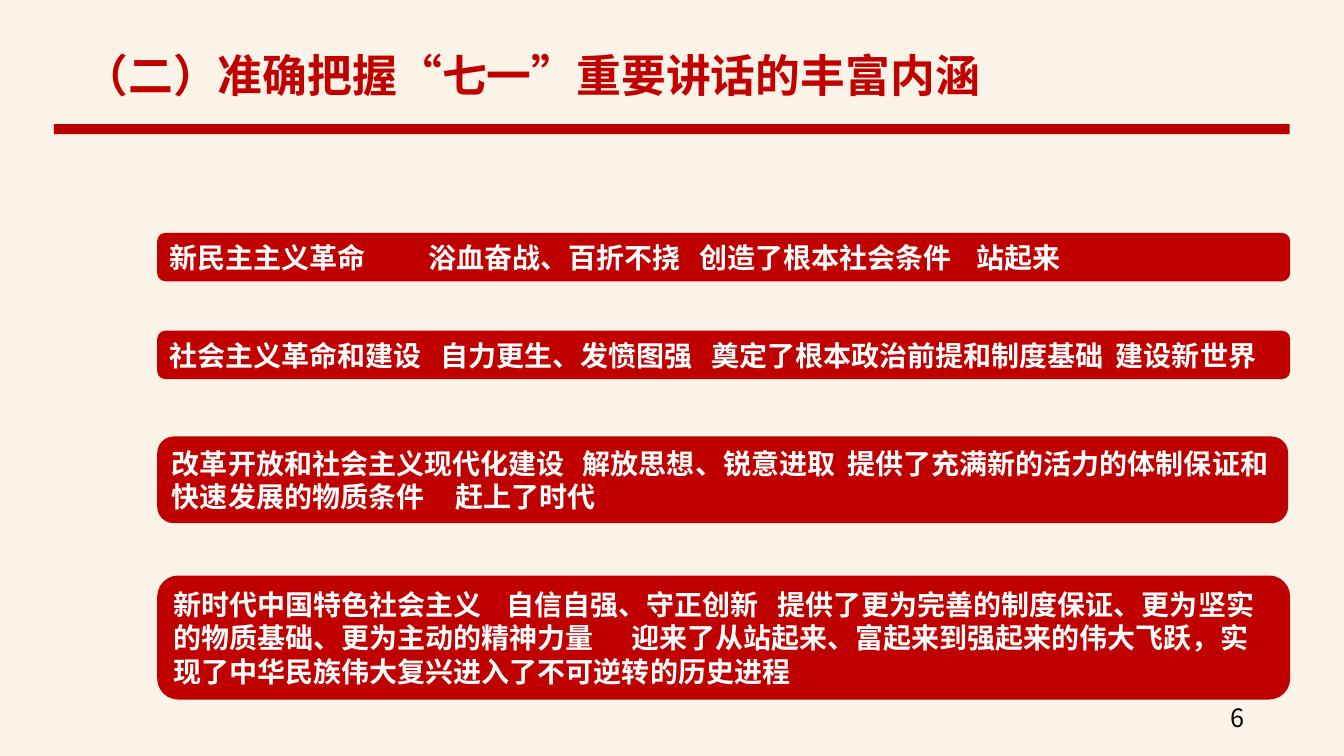
from dataclasses import dataclass

from lxml import etree
from pptx import Presentation
from pptx.dml.color import RGBColor
from pptx.enum import lang, shapes, text
from pptx.oxml import ns
from pptx.util import Pt


@dataclass(frozen=True)
class Theme:
    font: str = "Noto Sans CJK SC"
    paper: str = "FBF2E8"
    heading: str = "C10100"
    rule: str = "BA0000"
    bar: str = "C00000"
    on_bar: str = "FFFFFF"
    ink: str = "000000"
    heading_size: int = 32
    bar_size: int = 20
    number_size: int = 18


class SlideBuilder:
    def __init__(self, slide, theme):
        self.slide, self.theme = slide, theme
        self.fill(slide.background.fill, theme.paper)

    def fill(self, target, color):
        target.solid()
        target.fore_color.rgb = RGBColor.from_string(color)

    def block(self, preset, left, top, width, height, color):
        block = self.slide.shapes.add_shape(
            preset, Pt(left), Pt(top), Pt(width), Pt(height))
        block.shadow.inherit = False
        self.fill(block.fill, color)
        block.line.fill.background()
        return block

    def set_words(self, frame, words, size, color, bold, anchor, stops=()):
        frame.word_wrap = True
        frame.vertical_anchor = anchor
        paragraph = frame.paragraphs[0]
        paragraph.alignment = text.PP_ALIGN.LEFT
        if stops:
            tabs = etree.SubElement(paragraph._p.get_or_add_pPr(), ns.qn("a:tabLst"))
            for stop in stops:
                etree.SubElement(tabs, ns.qn("a:tab"), pos=str(Pt(stop)), algn="l")
        run = paragraph.add_run()
        run.text = words
        font = run.font
        font.size, font.bold, font.name = Pt(size), bold, self.theme.font
        font.language_id = lang.MSO_LANGUAGE_ID.SIMPLIFIED_CHINESE
        self.fill(font.fill, color)
        east_asian = etree.Element(ns.qn("a:ea"), typeface=self.theme.font)
        run._r.rPr.find(ns.qn("a:latin")).addnext(east_asian)

    def label(self, left, top, width, height, words, size, color, bold, anchor):
        box = self.slide.shapes.add_textbox(
            Pt(left), Pt(top), Pt(width), Pt(height))
        self.set_words(box.text_frame, words, size, color, bold, anchor)

    def bar(self, top, width, height, phrases, stops, corner):
        bar = self.block(shapes.MSO_SHAPE.ROUNDED_RECTANGLE,
                         112.3, top, width, height, self.theme.bar)
        bar.adjustments[0] = corner
        self.set_words(bar.text_frame, "\t".join(phrases), self.theme.bar_size,
                       self.theme.on_bar, True, text.MSO_ANCHOR.MIDDLE, stops)


# Each period: top, width, height, phrases, tab stops, corner
PERIODS = [
    (166.3, 809.3, 34.6,
     ["新民主主义革命", "浴血奋战、百折不挠", "创造了根本社会条件", "站起来"],
     [185, 378.5, 576.5], 0.17),
    (236.2, 809.3, 34.6,
     ["社会主义革命和建设", "自力更生、发愤图强",
      "奠定了根本政治前提和制度基础", "建设新世界"],
     [193.5, 387, 676], 0.17),
    (311.8, 807.8, 61.9,
     ["改革开放和社会主义现代化建设", "解放思想、锐意进取",
      "提供了充满新的活力的体制保证和快速发展的物质条件", "赶上了时代"],
     [202.5, 293.5, 482.5], 0.19),
    (411.1, 809.3, 88.6,
     ["新时代中国特色社会主义", "自信自强、守正创新",
      "提供了更为完善的制度保证、更为坚实的物质基础、更为主动的精神力量",
      "迎来了从站起来、富起来到强起来的伟大飞跃，实现了中华民族伟大复兴进入了不可逆转的历史进程"],
     [238, 327, 431.5], 0.17),
]


def main():
    deck = Presentation()
    deck.slide_width, deck.slide_height = Pt(960), Pt(540)
    theme = Theme()
    page = SlideBuilder(deck.slides.add_slide(deck.slide_layouts[6]), theme)

    # Heading and rule
    page.block(shapes.MSO_SHAPE.RECTANGLE, 38.5, 88.6, 882.7, 7.2, theme.rule)
    page.label(52.6, 30.2, 779.8, 46.1, "（二）准确把握“七一”重要讲话的丰富内涵",
               theme.heading_size, theme.heading, True, text.MSO_ANCHOR.BOTTOM)

    # Four historical periods
    for period in PERIODS:
        page.bar(*period)

    # Page number
    page.label(871.9, 498.2, 60, 28.8, "6",
               theme.number_size, theme.ink, False, text.MSO_ANCHOR.TOP)

    deck.save("out.pptx")


if __name__ == "__main__":
    main()
